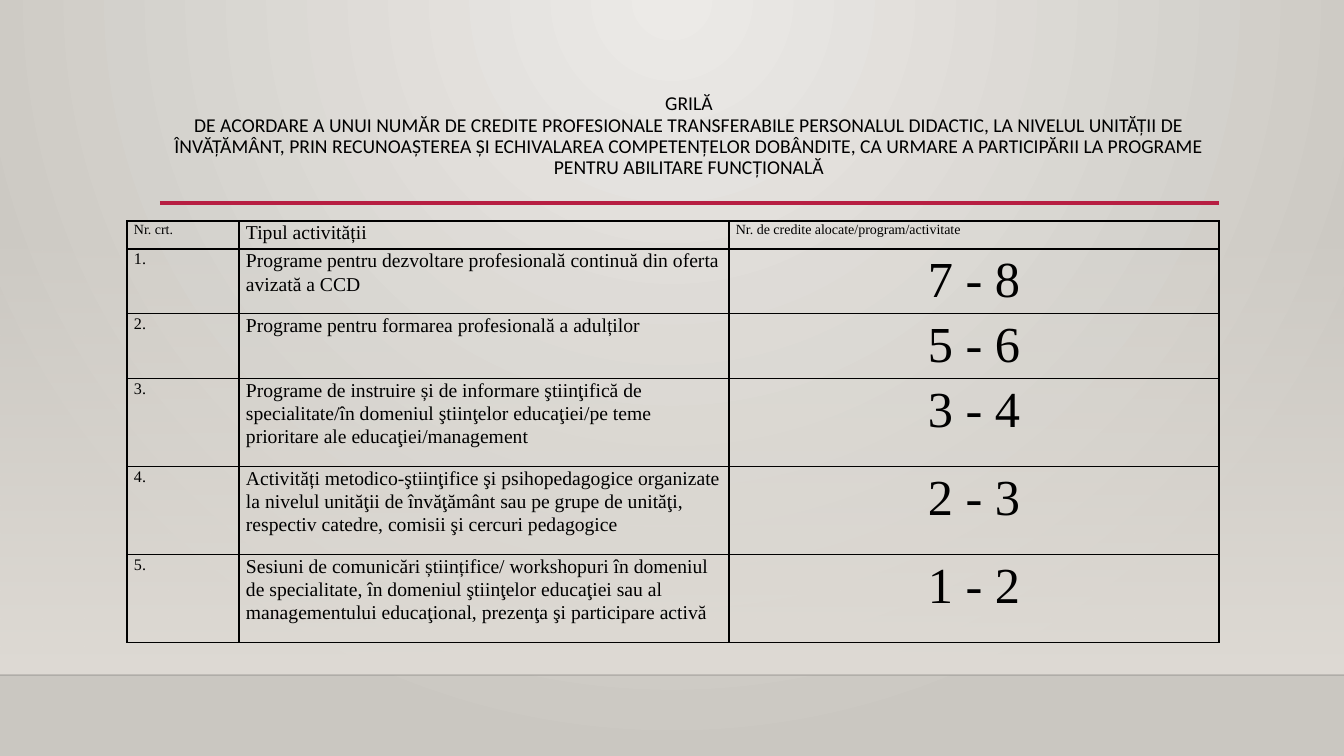
from dataclasses import dataclass

import pptx
import pptx.dml.color
import pptx.dml.fill
import pptx.enum.shapes
import pptx.enum.text
import pptx.oxml
import pptx.oxml.ns
import pptx.presentation
import pptx.slide
import pptx.table
import pptx.text.text
import pptx.util

qn = pptx.oxml.ns.qn
NS = 'xmlns:a="http://schemas.openxmlformats.org/drawingml/2006/main"'
ALIGN = pptx.enum.text.PP_ALIGN


@dataclass(frozen=True)
class Theme:
    ink: str = "000000"
    edge: str = "000001"
    red: str = "B71E42"
    light: str = "ECEAE7"
    dark: str = "CAC7C1"
    wall: str = "DFDBD5"
    head: str = "Calibri"
    body: str = "Times New Roman"
    small: float = 10
    index: float = 11.5
    text: float = 14
    score: float = 36


@dataclass(frozen=True)
class Rule:
    left: int
    right: int
    top: int
    color: str
    width: float
    alpha: int = 100


@dataclass(frozen=True)
class Row:
    height: int
    label: str
    score: str


THEME = Theme()
WIDTH, HEIGHT = 1344, 756
FLOOR = 675

RULES = [
    Rule(0, WIDTH, FLOOR, THEME.edge, 1, 20),
    Rule(160, 1219, 203, THEME.red, 2.5),
]

TITLE = [
    "GRILĂ",
    "DE ACORDARE A UNUI NUMĂR DE CREDITE PROFESIONALE TRANSFERABILE PERSONALUL DIDACTIC, "
    "LA NIVELUL UNITĂȚII DE ÎNVĂȚĂMÂNT, PRIN RECUNOAȘTEREA ȘI ECHIVALAREA COMPETENȚELOR "
    "DOBÂNDITE, CA URMARE A PARTICIPĂRII LA PROGRAME PENTRU ABILITARE FUNCȚIONALĂ",
]

COLUMNS = [112, 490, 490]
HEADER = Row(28, "Tipul activității", "Nr. de credite alocate/program/activitate")
ROWS = [
    Row(57, "Programe pentru dezvoltare profesională continuă din oferta avizată a CCD", "7 - 8"),
    Row(32, "Programe pentru formarea profesională a adulților", "5 - 6"),
    Row(88, "Programe de instruire și de informare ştiinţifică de specialitate/în domeniul "
            "ştiinţelor educaţiei/pe teme prioritare ale educaţiei/management", "3 - 4"),
    Row(88, "Activități metodico-ştiinţifice şi psihopedagogice organizate la nivelul unităţii "
            "de învăţământ sau pe grupe de unităţi, respectiv catedre, comisii şi cercuri "
            "pedagogice", "2 - 3"),
    Row(88, "Sesiuni de comunicări științifice/ workshopuri în domeniul de specialitate, în "
            "domeniul ştiinţelor educaţiei sau al managementului educaţional, prezenţa şi "
            "participare activă", "1 - 2"),
]


def px(count: int) -> pptx.util.Emu:
    return pptx.util.Emu(round(count * 914400 / 100.8))


def rgb(code: str) -> pptx.dml.color.RGBColor:
    return pptx.dml.color.RGBColor.from_string(code)


def fade(node, alpha: int) -> None:
    """Set the opacity, in percent, of the first colour inside node."""
    color = node.find(".//" + qn("a:srgbClr"))
    color.append(pptx.oxml.parse_xml(f'<a:alpha {NS} val="{alpha * 1000}"/>'))


def blend(fill: pptx.dml.fill.FillFormat, first: str, last: str) -> None:
    fill.gradient()
    for stop, code in zip(fill.gradient_stops, (first, last)):
        stop.color.rgb = rgb(code)


def add_run(para: pptx.text.text._Paragraph, text: str, font: str, size: float) -> None:
    run = para.add_run()
    run.text = text
    run.font.name = font
    run.font.size = pptx.util.Pt(size)
    run.font.color.rgb = rgb(THEME.ink)


def draw_back(slide: pptx.slide.Slide) -> None:
    blend(slide.background.fill, THEME.light, THEME.dark)
    line = slide.element.find(".//" + qn("a:lin"))
    line.getparent().replace(line, pptx.oxml.parse_xml(
        f'<a:path {NS} path="circle">'
        '<a:fillToRect l="43000" t="0" r="43000" b="100000"/></a:path>'))
    top = 223
    wall = slide.shapes.add_shape(
        pptx.enum.shapes.MSO_SHAPE.RECTANGLE, 0, px(top), px(WIDTH), px(FLOOR - top))
    wall.shadow.inherit = False
    wall.line.fill.background()
    blend(wall.fill, THEME.wall, THEME.wall)
    wall.fill.gradient_angle = 270
    fade(wall.element.spPr, 0)


def draw_rule(slide: pptx.slide.Slide, rule: Rule) -> None:
    line = slide.shapes.add_connector(
        pptx.enum.shapes.MSO_CONNECTOR.STRAIGHT,
        px(rule.left), px(rule.top), px(rule.right), px(rule.top))
    line.line.color.rgb = rgb(rule.color)
    line.line.width = pptx.util.Pt(rule.width)
    props = line.element.spPr
    if rule.alpha < 100:
        fade(props, rule.alpha)
    props.append(pptx.oxml.parse_xml(f"<a:effectLst {NS}/>"))


def draw_title(slide: pptx.slide.Slide) -> None:
    box = slide.shapes.add_textbox(px(160), px(89), px(1058), px(116))
    frame = box.text_frame
    frame.word_wrap = True
    para = frame.paragraphs[0]
    para.alignment = ALIGN.CENTER
    para.line_spacing = 0.9
    for index, line in enumerate(TITLE):
        if index:
            para.add_line_break()
        add_run(para, line, THEME.head, THEME.text)


def fill_cell(cell: pptx.table._Cell, text: str, size: float, align: ALIGN) -> None:
    cell.margin_left = cell.margin_right = px(7)
    cell.margin_top = cell.margin_bottom = 0
    cell.fill.background()
    props = cell._tc.get_or_add_tcPr()
    for place, side in enumerate("LRTB"):
        props.insert(place, pptx.oxml.parse_xml(
            f'<a:ln{side} {NS} w="12700"><a:solidFill><a:srgbClr val="{THEME.ink}"/>'
            f'</a:solidFill><a:prstDash val="solid"/></a:ln{side}>'))
    para = cell.text_frame.paragraphs[0]
    para.alignment = align
    para.line_spacing = 1.07
    add_run(para, text, THEME.body, size)


def draw_table(slide: pptx.slide.Slide) -> None:
    rows = [HEADER, *ROWS]
    table = slide.shapes.add_table(
        len(rows), len(COLUMNS), px(127), px(221),
        px(sum(COLUMNS)), px(sum(row.height for row in rows))).table
    table.first_row = table.horz_banding = False
    for column, width in zip(table.columns, COLUMNS):
        column.width = px(width)
    for index, row in enumerate(rows):
        table.rows[index].height = px(row.height)
        mark = f"{index}." if index else "Nr. crt."
        sizes = (THEME.index, THEME.text, THEME.score) if index else (
            THEME.small, THEME.text, THEME.small)
        last = ALIGN.CENTER if index else ALIGN.LEFT
        aligns = (ALIGN.LEFT, ALIGN.LEFT, last)
        texts = (mark, row.label, row.score)
        for place, (text, size, align) in enumerate(zip(texts, sizes, aligns)):
            fill_cell(table.cell(index, place), text, size, align)


def main() -> None:
    deck = pptx.Presentation()
    deck.slide_width, deck.slide_height = px(WIDTH), px(HEIGHT)
    slide = deck.slides.add_slide(deck.slide_layouts[6])
    draw_back(slide)
    for rule in RULES:
        draw_rule(slide, rule)
    draw_title(slide)
    draw_table(slide)
    deck.save("out.pptx")


if __name__ == "__main__":
    main()
